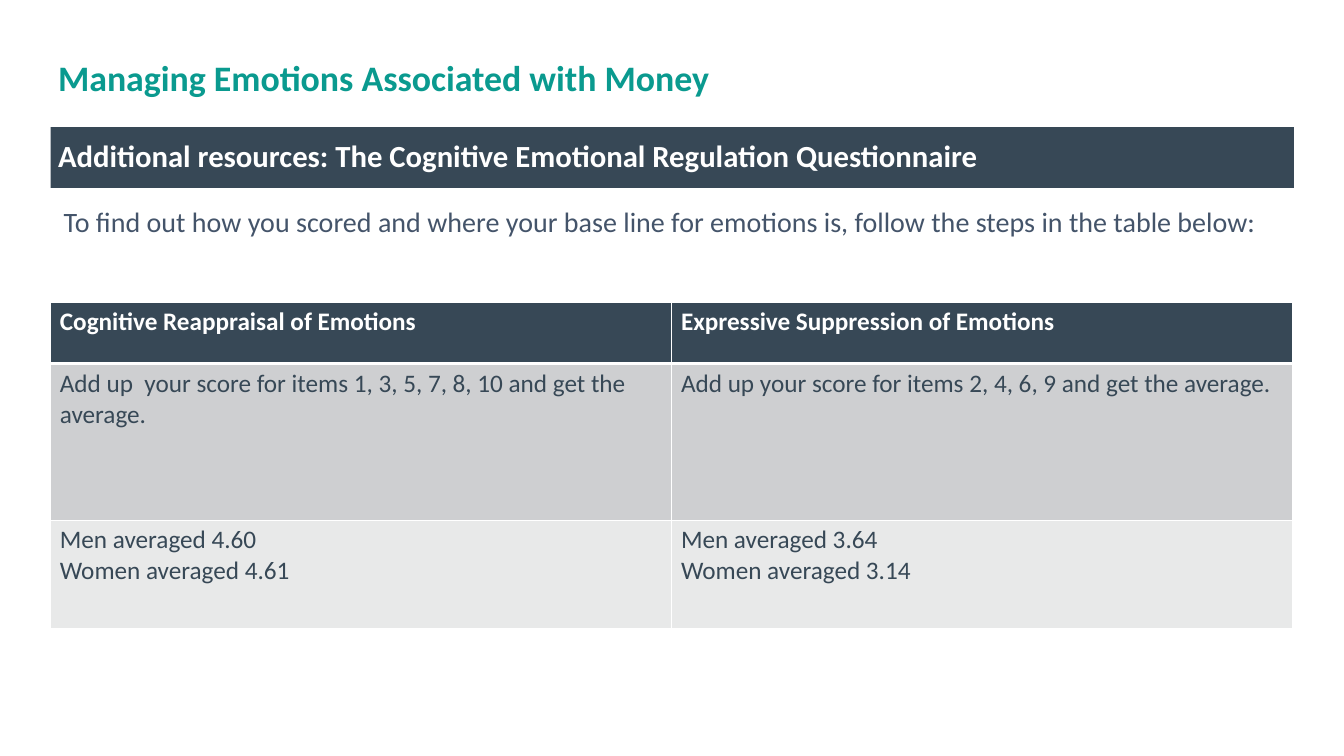
from lxml.etree import SubElement
from pptx import Presentation
from pptx.dml.color import RGBColor
from pptx.enum.shapes import MSO_SHAPE
from pptx.enum.text import MSO_ANCHOR, MSO_AUTO_SIZE, PP_ALIGN
from pptx.oxml.ns import qn
from pptx.util import Inches, Pt

TEAL = RGBColor(0x0A, 0x9A, 0x8F)
NAVY = RGBColor(0x37, 0x48, 0x56)
SLATE = RGBColor(0x44, 0x54, 0x6A)
WHITE = RGBColor(0xFF, 0xFF, 0xFF)
GREY = RGBColor(0xCE, 0xCF, 0xD1)
PALE = RGBColor(0xE8, 0xE9, 0xE9)

# The slide measures 1400 by 788 units, 96 to the inch
SLIDE_WIDTH, SLIDE_HEIGHT = 1400 / 96, 788 / 96
LEFT, WIDTH, TABLE_WIDTH = 0.55, 13.49, 13.48
ROW_HEIGHTS = [0.67, 1.7, 1.18]
ROW_FILLS = [NAVY, GREY, PALE]
SCORING = [
    ["Cognitive Reappraisal of Emotions", "Expressive Suppression of Emotions"],
    ["Add up  your score for items 1, 3, 5, 7, 8, 10 and get the average.",
     "Add up your score for items 2, 4, 6, 9 and get the average."],
    ["Men averaged 4.60\nWomen averaged 4.61", "Men averaged 3.64\nWomen averaged 3.14"],
]


def write(tf, text, size, color, bold=False, align=PP_ALIGN.LEFT, spacing=1.0):
    """Fill a text frame, one paragraph for each line of text."""
    for i, line in enumerate(text.split("\n")):
        p = tf.paragraphs[0] if i == 0 else tf.add_paragraph()
        p.alignment, p.line_spacing = align, spacing
        r = p.add_run()
        r.text = line
        r.font.name, r.font.size, r.font.bold = "Calibri", Pt(size), bold
        r.font.color.rgb = color


def set_borders(cell, **widths):
    """Draw white cell borders; widths are points keyed by L, R, T, B."""
    tcPr = cell._tc.get_or_add_tcPr()
    for side, width in widths.items():
        ln = SubElement(tcPr, qn(f"a:ln{side}"), w=str(int(Pt(width))))
        SubElement(SubElement(ln, qn("a:solidFill")), qn("a:srgbClr"), val=str(WHITE))


class SlideBuilder:
    def __init__(self, prs):
        self.s = prs.slides.add_slide(prs.slide_layouts[5])

    def frame(self, sp, anchor, inset=0.08):
        tf = sp.text_frame
        tf.word_wrap, tf.auto_size = True, MSO_AUTO_SIZE.NONE
        tf.vertical_anchor = anchor
        tf.margin_left, tf.margin_right = Inches(inset), Inches(0.08)
        tf.margin_top = tf.margin_bottom = Inches(0.05)
        return tf

    def title(self, text, top, height):
        sp = self.s.shapes.title
        sp.left, sp.top = Inches(LEFT), Inches(top)
        sp.width, sp.height = Inches(TABLE_WIDTH), Inches(height)
        write(self.frame(sp, MSO_ANCHOR.MIDDLE), text, 28, TEAL, bold=True, spacing=0.9)

    def banner(self, text, top, height):
        sp = self.s.shapes.add_shape(MSO_SHAPE.RECTANGLE, Inches(LEFT), Inches(top),
                                     Inches(WIDTH), Inches(height))
        sp.shadow.inherit = False
        sp.fill.solid()
        sp.fill.fore_color.rgb = NAVY
        sp.line.fill.background()
        write(self.frame(sp, MSO_ANCHOR.MIDDLE), text, 24, WHITE, bold=True,
              align=PP_ALIGN.JUSTIFY, spacing=0.9)

    def body(self, text, top, height):
        sp = self.s.shapes.add_textbox(Inches(LEFT), Inches(top), Inches(WIDTH), Inches(height))
        write(self.frame(sp, MSO_ANCHOR.TOP, inset=0.14), text, 21.9, SLATE,
              align=PP_ALIGN.JUSTIFY)

    def table(self, rows, top):
        table = self.s.shapes.add_table(len(rows), len(rows[0]), Inches(LEFT), Inches(top),
                                        Inches(TABLE_WIDTH), Inches(sum(ROW_HEIGHTS))).table
        for column in table.columns:
            column.width = Inches(TABLE_WIDTH / len(rows[0]))
        for i, texts in enumerate(rows):
            table.rows[i].height = Inches(ROW_HEIGHTS[i])
            header = i == 0
            for j, text in enumerate(texts):
                cell = table.cell(i, j)
                if header:
                    set_borders(cell, L=1, R=1, T=1, B=3)
                cell.fill.solid()
                cell.fill.fore_color.rgb = ROW_FILLS[i]
                write(cell.text_frame, text, 19.7, WHITE if header else NAVY, bold=header)


def main():
    prs = Presentation()
    prs.slide_width, prs.slide_height = Inches(SLIDE_WIDTH), Inches(SLIDE_HEIGHT)
    slide = SlideBuilder(prs)

    # Instructions
    slide.body("To find out how you scored and where your base line for emotions is, "
               "follow the steps in the table below:", 2.17, 5.61)

    # Heading
    slide.title("Managing Emotions Associated with Money", 0.47, 0.79)
    slide.banner("Additional resources: The Cognitive Emotional Regulation Questionnaire",
                 1.38, 0.66)

    # Scoring table
    slide.table(SCORING, 3.28)

    prs.save("out.pptx")


if __name__ == "__main__":
    main()
